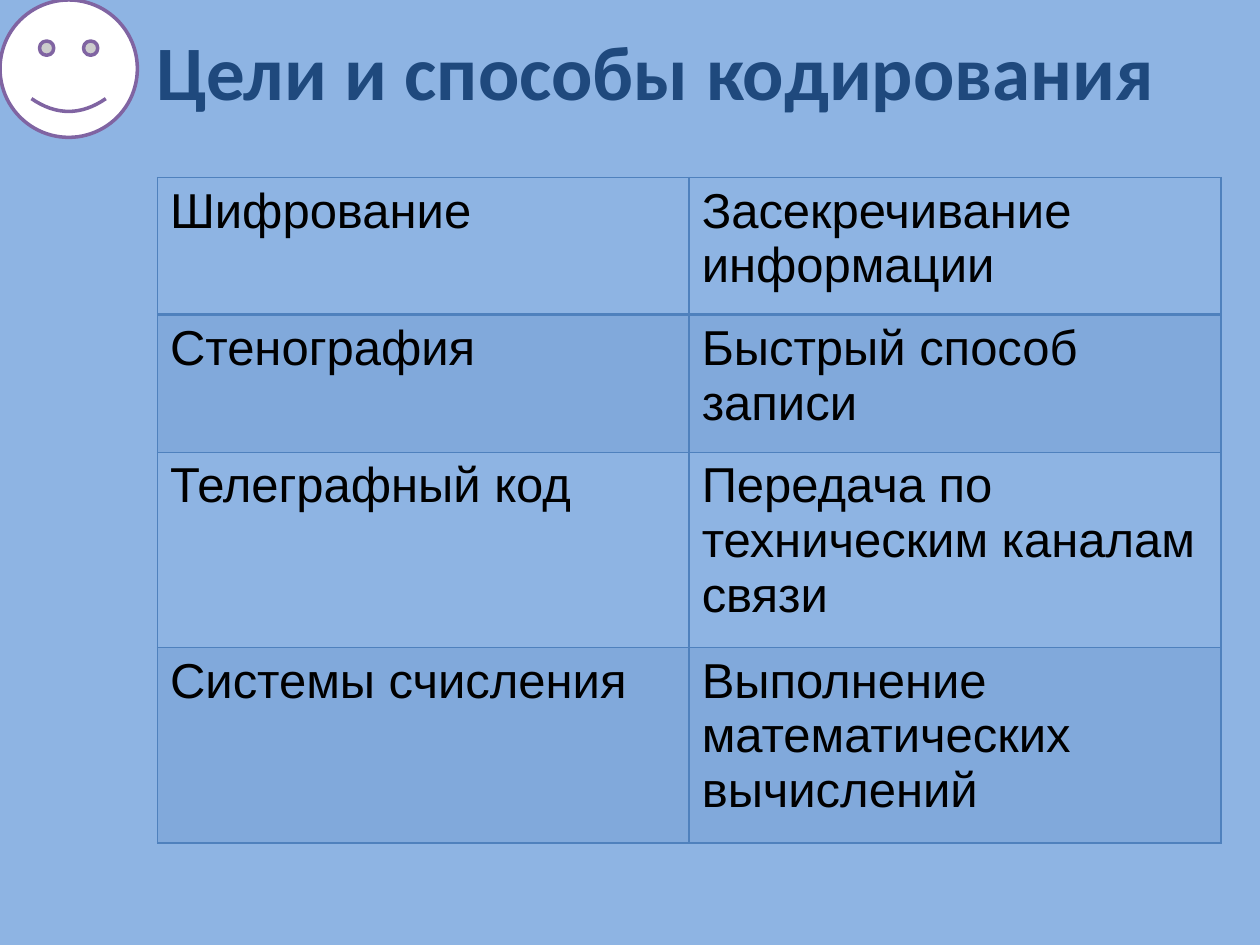
from lxml.etree import SubElement
from pptx import Presentation
from pptx.dml.color import RGBColor
from pptx.enum.shapes import MSO_SHAPE as Shape
from pptx.enum.text import MSO_ANCHOR as Anchor, PP_ALIGN as Align
from pptx.oxml.ns import qn
from pptx.util import Inches, Pt

SKY = RGBColor(0x8E, 0xB4, 0xE3)
NAVY = RGBColor(0x1F, 0x49, 0x7D)
BLUE = RGBColor(0x4F, 0x81, 0xBD)
PURPLE = RGBColor(0x80, 0x64, 0xA2)
WHITE = RGBColor(0xFF, 0xFF, 0xFF)
BLACK = RGBColor(0x00, 0x00, 0x00)

BAND_OPACITY = 20
COLUMN_WIDTHS = [4.22, 4.22]
ROW_HEIGHTS = [1.09, 1.09, 1.55, 1.55]
CODING_METHODS = [
    ("Шифрование", "Засекречивание\nинформации"),
    ("Стенография", "Быстрый способ\nзаписи"),
    ("Телеграфный код", "Передача по\nтехническим каналам\nсвязи"),
    ("Системы счисления", "Выполнение\nматематических\nвычислений"),
]


def write_text(frame, text, font="Arial", size=28, color=BLACK, bold=False):
    """Fill the first paragraph; each newline becomes a line break."""
    paragraph = frame.paragraphs[0]
    paragraph.alignment = Align.LEFT
    for index, line in enumerate(text.split("\n")):
        if index:
            paragraph.add_line_break()
        run = paragraph.add_run()
        run.text = line
        run.font.name = font
        run.font.size = Pt(size)
        run.font.bold = bold
        run.font.color.rgb = color


def set_borders(cell, color, widths):
    """Draw the left, right, top and bottom borders, widths in points."""
    properties = cell._tc.get_or_add_tcPr()
    for index, (side, width) in enumerate(zip("LRTB", widths)):
        line = properties.makeelement(qn(f"a:ln{side}"), {"w": str(Pt(width))})
        properties.insert(index, line)
        fill = SubElement(line, qn("a:solidFill"))
        SubElement(fill, qn("a:srgbClr"), val=str(color))


class SlideBuilder:
    def __init__(self, presentation, background):
        self.slide = presentation.slides.add_slide(presentation.slide_layouts[5])
        self.slide.background.fill.solid()
        self.slide.background.fill.fore_color.rgb = background

    def title(self, text, left, top, width, height):
        title = self.slide.shapes.title
        title.left, title.top = Inches(left), Inches(top)
        title.width, title.height = Inches(width), Inches(height)
        title.text_frame.vertical_anchor = Anchor.MIDDLE
        write_text(title.text_frame, text, font="Calibri", size=44,
                   color=NAVY, bold=True)

    def table(self, rows, left, top, widths, heights):
        table = self.slide.shapes.add_table(
            len(rows), len(widths), Inches(left), Inches(top),
            Inches(sum(widths)), Inches(sum(heights))).table
        table.first_row = table.horz_banding = False
        for column, width in zip(table.columns, widths):
            column.width = Inches(width)
        for row, height in zip(table.rows, heights):
            row.height = Inches(height)
        for row_index, texts in enumerate(rows):
            for column_index, text in enumerate(texts):
                cell = table.cell(row_index, column_index)
                write_text(cell.text_frame, text)
                self.band(cell, shaded=row_index % 2 == 1)
                set_borders(cell, BLUE, (1, 1, 2 if row_index == 1 else 1,
                                         2 if row_index == 0 else 1))

    def band(self, cell, shaded):
        """Tint every shaded cell and leave the others clear."""
        if not shaded:
            cell.fill.background()
            return
        cell.fill.solid()
        cell.fill.fore_color.rgb = BLUE
        color = cell._tc.tcPr.find(f".//{qn('a:srgbClr')}")
        SubElement(color, qn("a:alpha"), val=str(BAND_OPACITY * 1000))

    def smiley(self, left, top, size):
        face = self.slide.shapes.add_shape(
            Shape.SMILEY_FACE, Inches(left), Inches(top),
            Inches(size), Inches(size))
        face.shadow.inherit = False
        face.fill.solid()
        face.fill.fore_color.rgb = WHITE
        face.line.color.rgb = PURPLE
        face.line.width = Pt(2)


def main():
    presentation = Presentation()
    presentation.slide_width = Inches(10)
    presentation.slide_height = Inches(7.5)
    builder = SlideBuilder(presentation, SKY)
    builder.title("Цели и способы кодирования", 1.14, 0.21, 8.36, 0.69)
    builder.table(CODING_METHODS, 1.25, 1.41, COLUMN_WIDTHS, ROW_HEIGHTS)
    builder.smiley(0, 0, 1.09)
    presentation.save("out.pptx")


if __name__ == "__main__":
    main()
